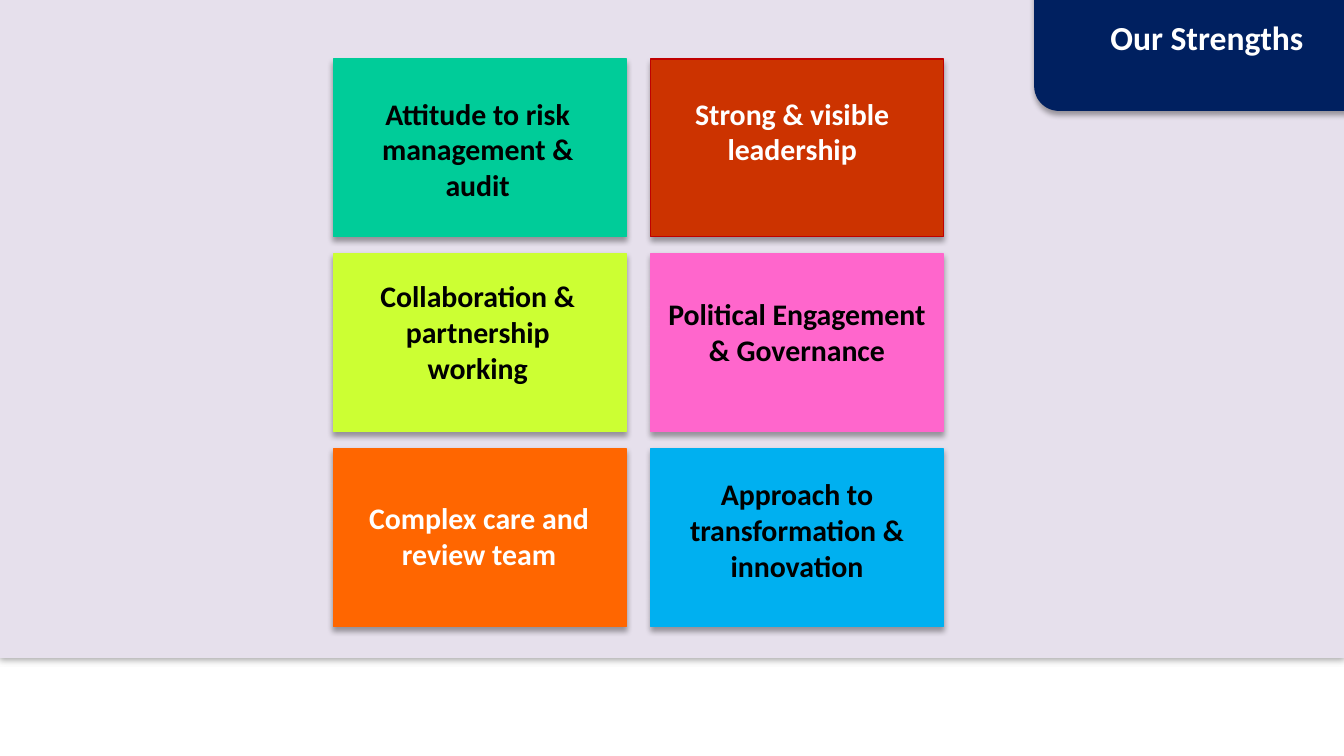
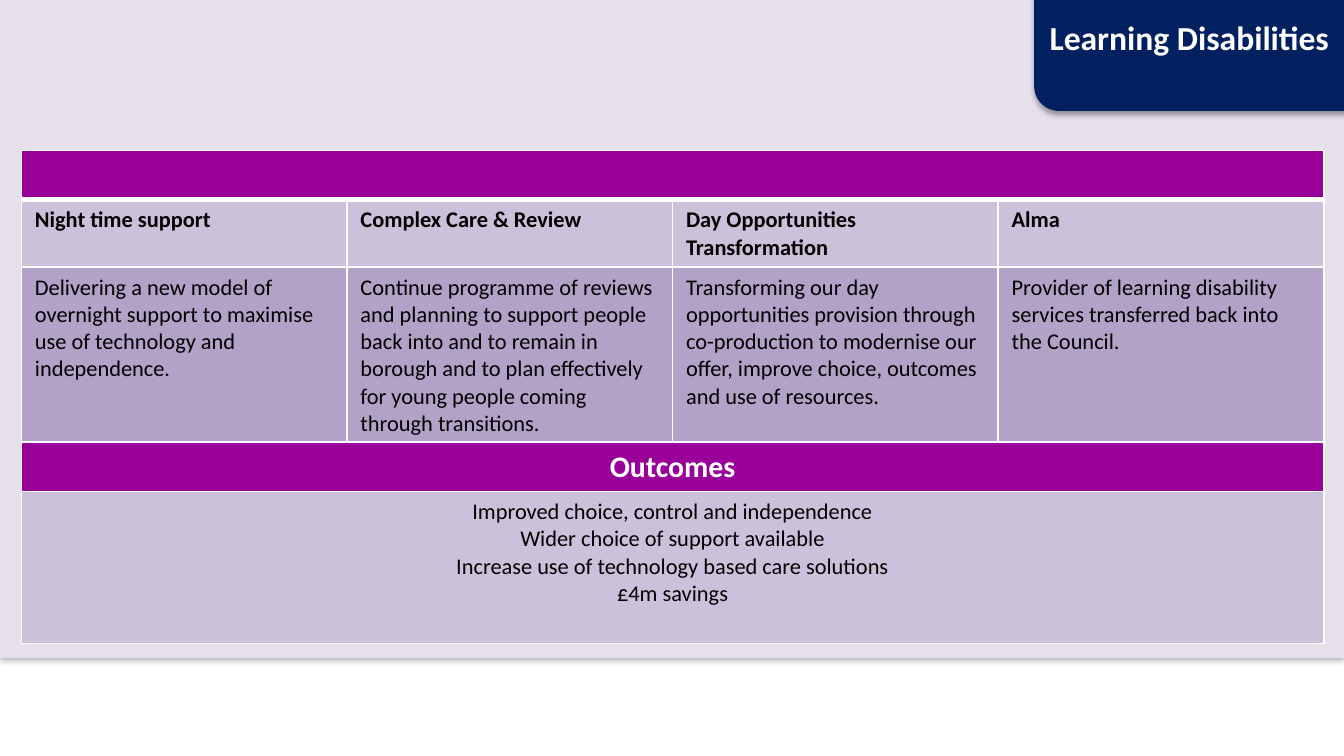
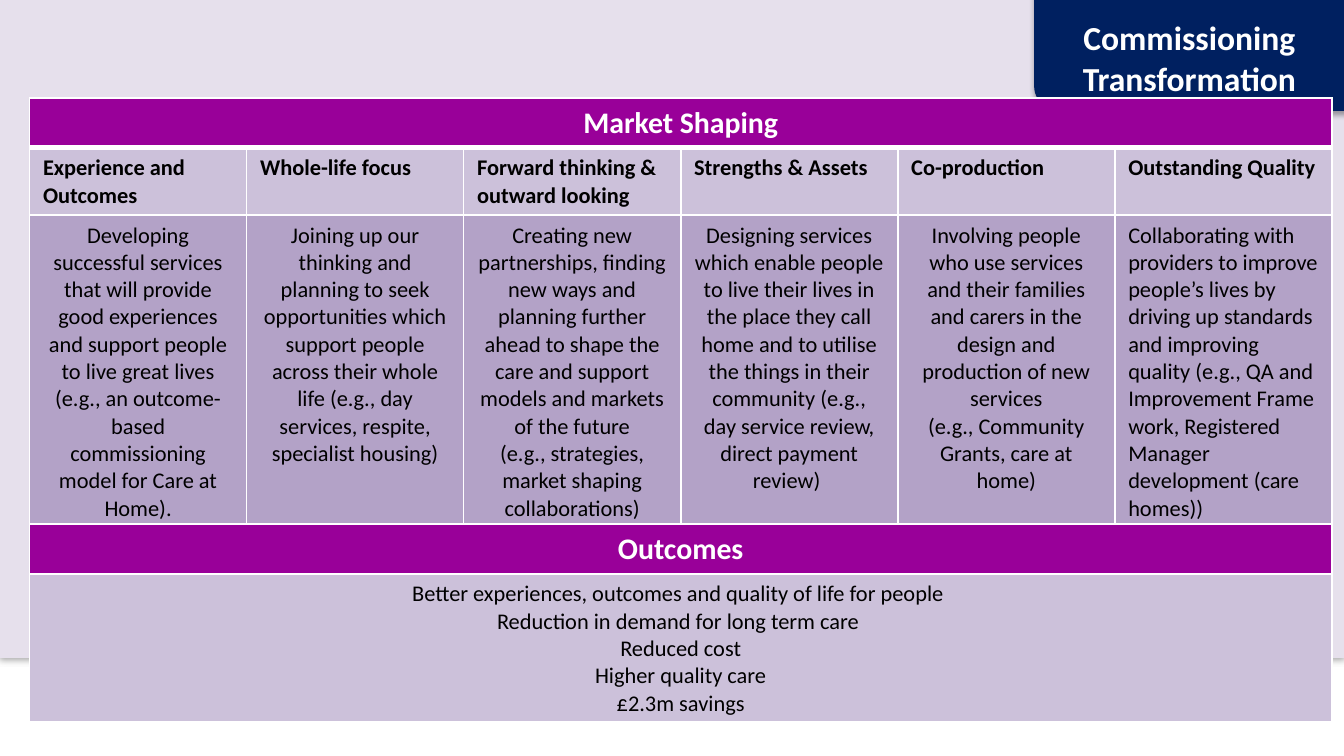
from lxml import etree
from pptx import Presentation
from pptx import util as u
from pptx.dml.color import RGBColor
from pptx.enum import shapes, text
from pptx.oxml import parse_xml
from pptx.oxml.ns import nsdecls, qn

COLORS = {
    "backdrop": "E6E0EC", "navy": "002060", "white": "FFFFFF", "black": "000000",
    "purple": "990099", "lilac": "CCC1DA", "mauve": "B3A2C7",
    "green": "00CC99", "red": "CC3300", "dark red": "C00000", "lime": "CCFF33",
    "pink": "FF66CC", "orange": "FF6600", "blue": "00B0F0",
}
TITLE = {"size": 18, "bold": True, "color": "white", "align": "CENTER"}
HEADING = {"size": 16, "bold": True, "color": "white", "align": "CENTER"}
LABEL = {"size": 12, "bold": True, "color": "black", "align": "LEFT"}
BODY = {**LABEL, "bold": False}
CENTERED = {**BODY, "align": "CENTER"}
HARD_SPACE = chr(160)


def add_panel(parent, kind, box, fill, line=None):
    """Add a filled shape with a thin outline and a soft shadow below it."""
    panel = parent.shapes.add_shape(kind, *map(u.Inches, box))
    panel.fill.solid()
    panel.fill.fore_color.rgb = RGBColor.from_string(COLORS[fill])
    panel.line.color.rgb = RGBColor.from_string(COLORS[line or fill])
    panel.line.width = u.Pt(0.75)
    panel.shadow.inherit = False
    effects = panel._element.spPr.find(qn("a:effectLst"))
    effects.append(parse_xml(
        f'<a:outerShdw {nsdecls("a")} blurRad="{u.Pt(3.1)}" dist="{u.Pt(1.8)}" '
        'dir="5400000" rotWithShape="0"><a:srgbClr val="000000">'
        '<a:alpha val="35000"/></a:srgbClr></a:outerShdw>'))


def write_text(frame, lines, style):
    """Write one paragraph per line; a tilde stands for a hard space."""
    frame.word_wrap = True
    for index, line in enumerate(lines):
        paragraph = frame.add_paragraph() if index else frame.paragraphs[0]
        paragraph.alignment = getattr(text.PP_ALIGN, style["align"])
        run = paragraph.add_run()
        run.text = line.replace("~", HARD_SPACE)
        font = {"name": "Calibri", "size": u.Pt(style["size"]), "bold": style["bold"]}
        for attribute, value in font.items():
            setattr(run.font, attribute, value)
        run.font.color.rgb = RGBColor.from_string(COLORS[style["color"]])


presentation = Presentation()
presentation.slide_width = u.Inches(10)
presentation.slide_height = presentation.slide_width * 9 // 16

# Shared backdrop, corner tab and title
titles = [
    ("Our Strengths", 7.34, 0.4),
    ("Learning Disabilities", 7.21, 0.4),
    ("Commissioning Transformation", 7.21, 0.71),
]
for title, left, height in titles:
    slide = presentation.slides.add_slide(presentation.slide_layouts[6])
    add_panel(slide, shapes.MSO_SHAPE.RECTANGLE, (0, 0, 10, 4.89), "backdrop")
    add_panel(slide, shapes.MSO_SHAPE.ROUNDED_RECTANGLE, (7.7, -0.26, 3.47, 1.08), "navy")
    title_box = slide.shapes.add_textbox(*map(u.Inches, (left, 0.08, 3.28, height)))
    write_text(title_box.text_frame, [title], TITLE)

strengths_slide, *table_slides = presentation.slides

# Strengths: two columns of tiles; each label has its left, top, width and line count
strengths = [
    ("Attitude to risk management & audit", "green", "green", "black", 2.54, 0.66, 2.03, 3),
    ("Strong & visible leadership", "red", "dark red", "white", 4.88, 0.66, 2.03, 2),
    ("Collaboration & partnership working", "lime", "lime", "black", 2.54, 2.02, 2.03, 3),
    ("Political Engagement & Governance", "pink", "pink", "black", 4.84, 2.15, 2.18, 2),
    ("Complex care and review team", "orange", "orange", "white", 2.55, 3.67, 2.03, 2),
    ("Approach to transformation & innovation", "blue", "blue", "black", 4.84, 3.49, 2.18, 3),
]
for index, (label, fill, line, color, left, top, width, line_count) in enumerate(strengths):
    row, column = divmod(index, 2)
    group = strengths_slide.shapes.add_group_shape()
    tile_box = (2.48 + 2.36 * column, 0.44 + 1.45 * row, 2.18, 1.32)
    add_panel(group, shapes.MSO_SHAPE.RECTANGLE, tile_box, fill, line)
    label_box = group.shapes.add_textbox(
        *map(u.Inches, (left, top, width, 0.1 + 0.27 * line_count)))
    write_text(label_box.text_frame, [label], {**HEADING, "color": color})

# Programme tables: heading, themes with descriptions, then outcomes
programmes = [
    {
        "heading": "", "left": 0.16, "top": 1.12, "rows": [0.35, 0.49, 1.3, 0.37, 1.13],
        "themes": [
            ("Night time support", BODY,
             "Delivering a new model of overnight support to maximise use of technology "
             "and independence."),
            ("Complex Care & Review", BODY,
             "Continue programme of reviews and planning to support people back into and "
             "to remain in borough and to plan effectively for young people coming "
             "through transitions."),
            ("Day Opportunities Transformation", BODY,
             "Transforming our day opportunities provision through co-production to "
             "modernise our offer, improve choice, outcomes and use of resources."),
            ("Alma", BODY,
             "Provider of learning disability services transferred back into the Council."),
        ],
        "outcomes": ["Improved choice, control and independence",
                     "Wider choice of support available",
                     "Increase use of technology based care solutions", "£4m savings"],
    },
    {
        "heading": "Market Shaping", "left": 0.22, "top": 0.73,
        "rows": [0.37, 0.49, 2.3, 0.37, 1.1],
        "themes": [
            ("Experience and Outcomes", CENTERED,
             "Developing successful services that will provide good experiences and "
             "support people to live great lives (e.g., an~outcome-based commissioning "
             "model for Care at Home)."),
            ("Whole-life focus", CENTERED,
             "Joining up our thinking and planning to seek opportunities which support "
             "people across their whole life (e.g.,~day services, respite, specialist "
             "housing)"),
            ("Forward thinking & outward looking", CENTERED,
             "Creating new partnerships, finding new ways and planning further ahead to "
             "shape the care and support models and markets of the future "
             "(e.g.,~strategies, market shaping collaborations)"),
            ("Strengths & Assets", CENTERED,
             "Designing services which enable people to live their lives in the place "
             "they call home and to utilise the things in their community (e.g., day "
             "service review, direct payment review)~"),
            ("Co-production", CENTERED,
             "Involving people who use services and their families and carers in the "
             "design and production of new services (e.g.,~Community Grants, care at "
             "home)"),
            ("Outstanding Quality", BODY,
             "Collaborating with providers to improve people’s lives by driving up "
             "standards and improving quality (e.g.,~QA and Improvement~Framework, "
             "Registered Manager development (care homes))"),
        ],
        "outcomes": ["Better experiences, outcomes and quality of life for people~",
                     "Reduction in demand for long term care~", "Reduced cost",
                     "Higher quality care", "£2.3m savings"],
    },
]
row_fills = ["purple", "lilac", "mauve", "purple", "lilac"]

for slide, programme in zip(table_slides, programmes):
    themes, heights = programme["themes"], programme["rows"]
    frame = slide.shapes.add_table(
        len(heights), len(themes), u.Inches(programme["left"]), u.Inches(programme["top"]),
        u.Inches(9.69), u.Inches(sum(heights)))
    table = frame.table
    table.first_row = table.horz_banding = False
    for column in table.columns:
        column.width = u.Inches(9.69 / len(themes))

    for row, (height, fill) in enumerate(zip(heights, row_fills)):
        table.rows[row].height = u.Inches(height)
        for column in range(len(themes)):
            cell = table.cell(row, column)
            properties = cell._tc.get_or_add_tcPr()
            for side in ("L", "R", "T", "B"):
                under_heading = (row, side) in ((0, "B"), (1, "T"))
                border = etree.SubElement(properties, qn(f"a:ln{side}"),
                                          w=str(u.Pt(3 if under_heading else 1)))
                solid = etree.SubElement(border, qn("a:solidFill"))
                etree.SubElement(solid, qn("a:srgbClr"), val=COLORS["white"])
            cell.fill.solid()
            cell.fill.fore_color.rgb = RGBColor.from_string(COLORS[fill])

    for column, (theme, style, description) in enumerate(themes):
        write_text(table.cell(1, column).text_frame, [theme], LABEL)
        write_text(table.cell(2, column).text_frame, [description], style)

    full_rows = [(0, [programme["heading"]], HEADING), (3, ["Outcomes"], HEADING),
                 (4, programme["outcomes"], CENTERED)]
    for row, lines, style in full_rows:
        cell = table.cell(row, 0)
        cell.merge(table.cell(row, len(themes) - 1))
        if any(lines):
            write_text(cell.text_frame, lines, style)
        else:
            # Keep the blank heading row as low as its 16 pt neighbours
            for blank in table.rows[row].cells:
                etree.SubElement(blank.text_frame.paragraphs[0]._p,
                                 qn("a:endParaRPr"), sz=str(style["size"] * 100))

presentation.save("out.pptx")
